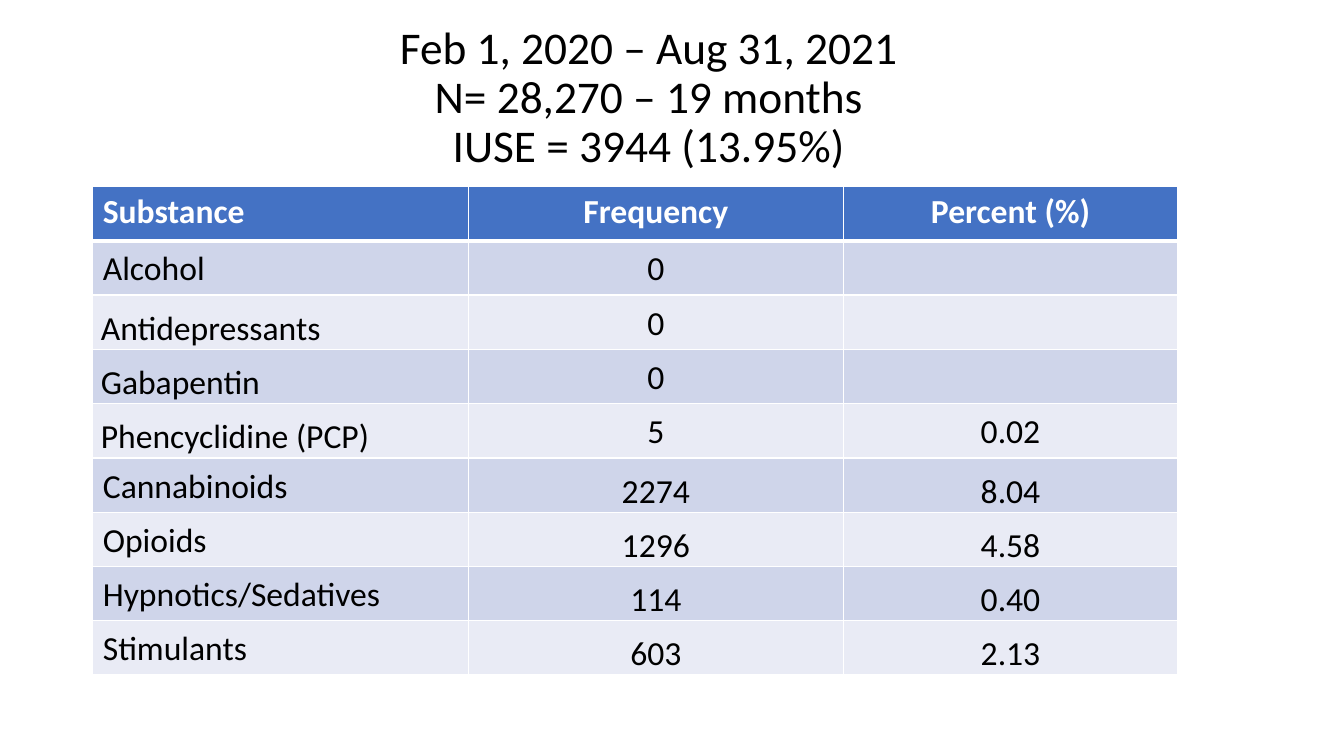
import lxml.etree
import pptx
import pptx.dml.color
import pptx.enum.text
import pptx.oxml.ns
import pptx.util

Inches = pptx.util.Inches
Pt = pptx.util.Pt
RGB = pptx.dml.color.RGBColor
ANCHOR = pptx.enum.text.MSO_ANCHOR
ALIGN = pptx.enum.text.PP_ALIGN
qn = pptx.oxml.ns.qn

WHITE = RGB(0xFF, 0xFF, 0xFF)
BLACK = RGB(0, 0, 0)
BLUE = RGB(0x44, 0x72, 0xC4)
BANDS = (RGB(0xCF, 0xD5, 0xEA), RGB(0xE9, 0xEB, 0xF5))
FONT = "Calibri"

TITLE = (
    "Feb 1, 2020 – Aug 31, 2021",
    "N= 28,270 – 19 months",
    "IUSE = 3944 (13.95%)",
)
HEADS = ("Substance", "Frequency", "Percent (%)")
ROWS = (
    ("Alcohol", "0", ""),
    ("Antidepressants", "0", ""),
    ("Gabapentin", "0", ""),
    ("Phencyclidine (PCP)", "5", "0.02"),
    ("Cannabinoids", "2274", "8.04"),
    ("Opioids", "1296", "4.58"),
    ("Hypnotics/Sedatives", "114", "0.40"),
    ("Stimulants", "603", "2.13"),
)
LOW_NAMES = range(2, 5)
LOW_COUNTS = range(5, 9)


def write(para, text, size, color, align, bold=False):
    """Add one styled run to a paragraph."""
    para.alignment = align
    run = para.add_run()
    run.text = text
    run.font.name = FONT
    run.font.size = Pt(size)
    run.font.bold = bold
    run.font.color.rgb = color


def add_title(slide, left, top, width, height):
    """Place the centred heading lines in the given box."""
    frame = slide.shapes.add_textbox(left, top, width, height).text_frame
    frame.word_wrap = True
    frame.vertical_anchor = ANCHOR.MIDDLE
    for i, line in enumerate(TITLE):
        para = frame.paragraphs[0] if i == 0 else frame.add_paragraph()
        para.line_spacing = 0.9
        write(para, line, 32.4, BLACK, ALIGN.CENTER)


def add_rules(cell, top, bottom):
    """Draw white borders round a cell with the given top and bottom weights."""
    props = cell._tc.get_or_add_tcPr()
    for side, weight in (("L", 1), ("R", 1), ("T", top), ("B", bottom)):
        line = lxml.etree.SubElement(props, qn("a:ln" + side), w=str(Pt(weight)))
        fill = lxml.etree.SubElement(line, qn("a:solidFill"))
        lxml.etree.SubElement(fill, qn("a:srgbClr"), val=str(WHITE))


def fill_cell(cell, row, col, text):
    """Style one cell by its row and column and write its text."""
    head = row == 0
    add_rules(cell, 3 if row == 1 else 1, 3 if head else 1)
    cell.fill.solid()
    cell.fill.fore_color.rgb = BLUE if head else BANDS[(row - 1) % 2]
    cell.vertical_anchor = ANCHOR.TOP if head else ANCHOR.BOTTOM
    if row in (LOW_COUNTS if col else LOW_NAMES):
        cell.margin_left = Inches(0.01 if col else 0.08)
        cell.margin_right = cell.margin_top = Inches(0.01)
        cell.margin_bottom = 0
    if text:
        align = ALIGN.CENTER if col else ALIGN.LEFT
        write(cell.text_frame.paragraphs[0], text, 24,
              WHITE if head else BLACK, align, head)


def add_grid(slide, left, top, width, height):
    """Place the substance table in the given box."""
    data = (HEADS,) + ROWS
    table = slide.shapes.add_table(
        len(data), len(HEADS), left, top, width, height).table
    shares = (0.346, 0.346, 0.308)
    for column, share in zip(table.columns, shares):
        column.width = int(width * share)
    for r, texts in enumerate(data):
        table.rows[r].height = int(height / len(data))
        for c, text in enumerate(texts):
            fill_cell(table.cell(r, c), r, c, text)


def main():
    """Build and save the slide."""
    deck = pptx.Presentation()
    deck.slide_width = Inches(13.33)
    deck.slide_height = Inches(7.5)
    slide = deck.slides.add_slide(deck.slide_layouts[6])
    left = Inches(0.92)
    add_title(slide, left, Inches(0.12), Inches(11.03), Inches(1.72))
    add_grid(slide, left, Inches(1.85), Inches(10.76), Inches(4.85))
    deck.save("out.pptx")


if __name__ == "__main__":
    main()
